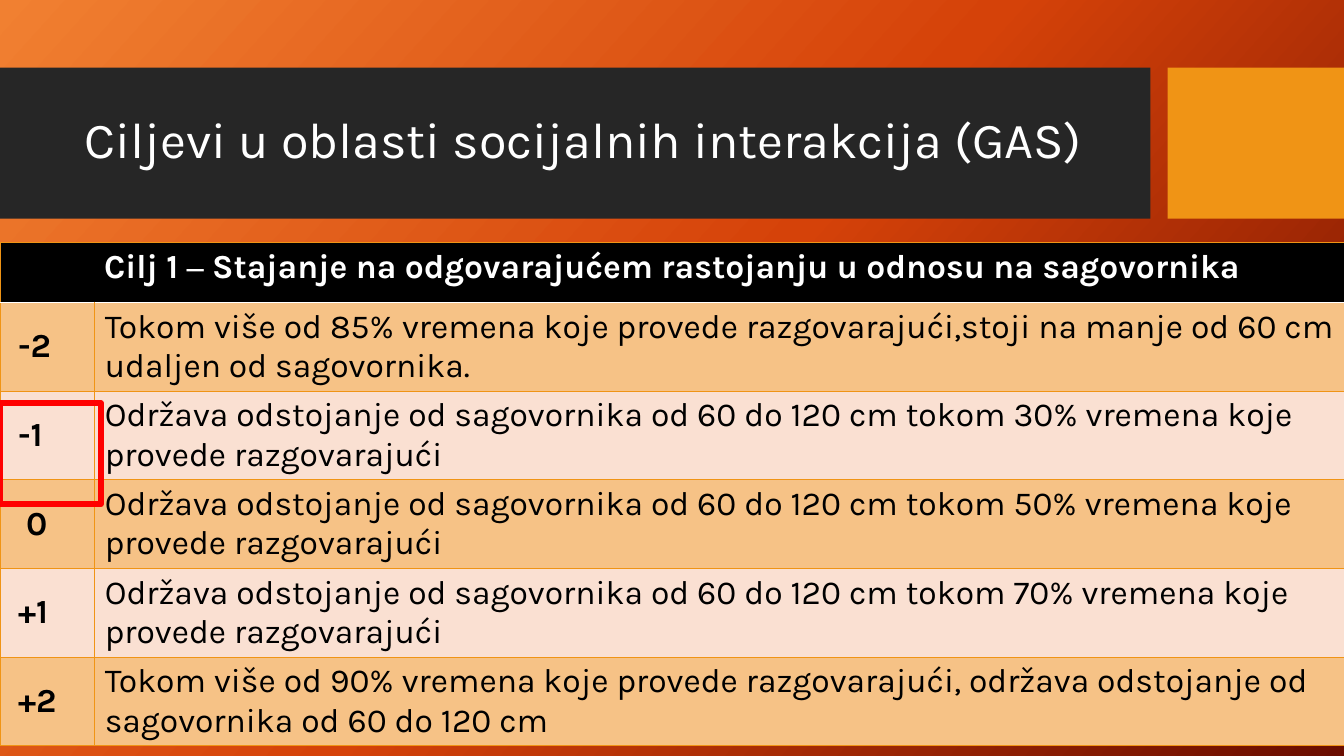
from copy import deepcopy

from pptx import Presentation
from pptx.dml.color import RGBColor
from pptx.enum.shapes import MSO_SHAPE
from pptx.enum.text import MSO_ANCHOR, MSO_AUTO_SIZE, PP_ALIGN
from pptx.oxml import parse_xml
from pptx.oxml.ns import nsdecls, qn
from pptx.util import Inches, Pt

RECTANGLE = MSO_SHAPE.RECTANGLE
MIDDLE = MSO_ANCHOR.MIDDLE
TOP = MSO_ANCHOR.TOP
LEFT = PP_ALIGN.LEFT
CENTER = PP_ALIGN.CENTER
NO_AUTOFIT = MSO_AUTO_SIZE.NONE

FONT = "Karla"
WHITE, BLACK, CHARCOAL = "FFFFFF", "000000", "262626"
ORANGE, AMBER, BLUSH, RED = "F09415", "F6C286", "FAE0D2", "FF0000"
GRADIENT = [(0, "F18031"), (0.5, "D54209"), (1, "6A0D00")]

TITLE = "Ciljevi u oblasti socijalnih interakcija (GAS)"
GOAL = [
    ("Cilj 1 ", FONT),
    ("– ", "Times New Roman"),
    ("Stajanje na odgovarajućem rastojanju u odnosu na sagovornika", FONT),
]
KEEPS = "Održava odstojanje od sagovornika od 60 do 120 cm tokom {} vremena koje provede razgovarajući"
LEVELS = [
    ("-2", "Tokom više od 85% vremena koje provede razgovarajući,stoji na manje od 60 cm udaljen od sagovornika."),
    ("-1", KEEPS.format("30%")),
    ("0", KEEPS.format("50%")),
    ("+1", KEEPS.format("70%")),
    ("+2", "Tokom više od 90% vremena koje provede razgovarajući, održava odstojanje od sagovornika od 60 do 120 cm"),
]
RING_START = (0.6, 4.21)
RING_CURVES = [
    ((0.57, 4.16), (0.53, 4.14), (0.47, 4.12)),
    ((0.4, 4.1), (0.28, 4.06), (0.22, 4.09)),
    ((0.16, 4.11), (0.11, 4.21), (0.1, 4.29)),
    ((0.09, 4.38), (0.1, 4.52), (0.17, 4.59)),
    ((0.24, 4.65), (0.43, 4.7), (0.52, 4.67)),
    ((0.6, 4.65), (0.66, 4.51), (0.67, 4.43)),
    ((0.69, 4.36), (0.64, 4.26), (0.6, 4.21)),
]


def color(value):
    return RGBColor.from_string(value)


def add_span(para, text, values, ink):
    span = para.add_run()
    span.text = text
    for name, value in values.items():
        setattr(span.font, name, value)
    span.font.color.rgb = color(ink)


def paint_background(page):
    fill = page.background.fill
    fill.gradient()
    fill.gradient_angle = 318
    stop_list = page.element.find(".//" + qn("a:gsLst"))
    stop_list.insert(1, deepcopy(stop_list[0]))
    for stop, (position, value) in zip(fill.gradient_stops, GRADIENT):
        stop.position = position
        stop.color.rgb = color(value)


def add_banner(page, left, top, width, height):
    square = 1.75
    bars = [(left, width - square - 0.17, CHARCOAL), (left + width - square, square, ORANGE)]
    for bar_left, bar_width, value in bars:
        bar = page.shapes.add_shape(
            RECTANGLE, Inches(bar_left), Inches(top), Inches(bar_width), Inches(height))
        bar.shadow.inherit = False
        bar.fill.solid()
        bar.fill.fore_color.rgb = color(value)
        bar.line.fill.background()
    title = page.shapes.title
    page.shapes.element.append(title.element)
    title.left, title.top = Inches(left + 0.74), Inches(top + 0.15)
    title.width, title.height = Inches(10.51), Inches(1.18)
    frame = title.text_frame
    frame.word_wrap = True
    frame.auto_size = NO_AUTOFIT
    frame.vertical_anchor = MIDDLE
    para = frame.paragraphs[0]
    para.alignment = LEFT
    para.line_spacing = 0.9
    add_span(para, TITLE, {"size": Pt(36), "name": FONT}, WHITE)


def style_cell(cell, fill, top, bottom):
    properties = cell._tc.get_or_add_tcPr()
    edges = {"lnL": (ORANGE, 0.75), "lnR": (ORANGE, 0.75), "lnT": top, "lnB": bottom}
    for tag, (value, width) in edges.items():
        properties.append(parse_xml(
            f'<a:{tag} {nsdecls("a")} w="{Pt(width)}"><a:solidFill>'
            f'<a:srgbClr val="{value}"/></a:solidFill></a:{tag}>'))
    cell.fill.solid()
    cell.fill.fore_color.rgb = color(fill)


def add_goal_table(page, left, top, width):
    header_height, level_height, score_width = 0.59, 0.88, 0.94
    height = header_height + level_height * len(LEVELS)
    table = page.shapes.add_table(
        len(LEVELS) + 1, 2, Inches(left), Inches(top), Inches(width), Inches(height)).table
    table.horz_banding = False
    table.columns[0].width = Inches(score_width)
    table.columns[1].width = Inches(width - score_width)
    table.rows[0].height = Inches(header_height)
    thin, divider = (ORANGE, 0.75), (WHITE, 1)

    header = table.cell(0, 0)
    header.merge(table.cell(0, 1))
    for column in range(2):
        style_cell(table.cell(0, column), BLACK, thin, divider)
    para = header.text_frame.paragraphs[0]
    para.alignment = CENTER
    for text, font in GOAL:
        add_span(para, text, {"size": Pt(24), "name": font, "bold": True}, WHITE)

    for row, level in enumerate(LEVELS, 1):
        table.rows[row].height = Inches(level_height)
        for column, text in enumerate(level):
            cell = table.cell(row, column)
            style_cell(cell, AMBER if row % 2 else BLUSH, divider if row == 1 else thin, thin)
            cell.vertical_anchor = TOP if column else MIDDLE
            if column == 0:
                cell.margin_left = Inches(0.26 if text == "0" else 0.18)
            values = {"size": Pt(24), "name": FONT, "bold": column == 0}
            add_span(cell.text_frame.paragraphs[0], text, values, BLACK)


def curve_points(start, curves, steps=8):
    points = []
    for first, second, end in curves:
        for step in range(1, steps + 1):
            t = step / steps
            points.append(tuple(
                (1 - t) ** 3 * a + 3 * (1 - t) ** 2 * t * b + 3 * (1 - t) * t ** 2 * c + t ** 3 * d
                for a, b, c, d in zip(start, first, second, end)))
        start = end
    return points


def add_ring(page):
    builder = page.shapes.build_freeform(*RING_START, scale=Inches(1))
    builder.add_line_segments(curve_points(RING_START, RING_CURVES), close=True)
    ring = builder.convert_to_shape()
    ring.shadow.inherit = False
    ring.fill.background()
    ring.line.color.rgb = color(RED)
    ring.line.width = Pt(4.5)


def main():
    deck = Presentation()
    deck.slide_width, deck.slide_height = Inches(13.33), Inches(7.5)
    page = deck.slides.add_slide(deck.slide_layouts[5])
    paint_background(page)
    add_banner(page, 0, 0.67, 13.33, 1.5)
    add_goal_table(page, 0, 2.41, 13.33)
    add_ring(page)
    deck.save("out.pptx")


if __name__ == "__main__":
    main()
